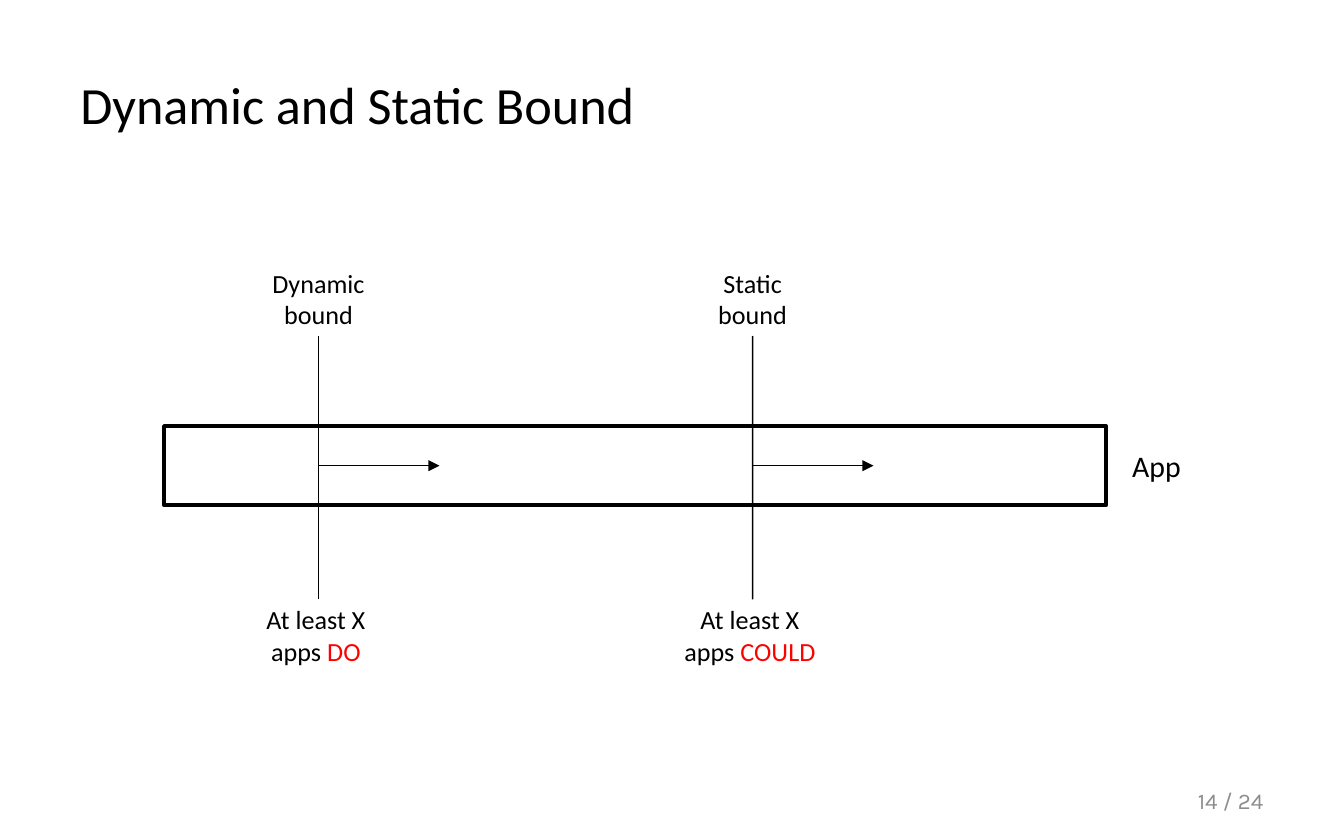
import pptx
import pptx.util
import pptx.dml.color
import pptx.enum.shapes
import pptx.enum.text
import pptx.oxml.ns
from lxml import etree

Inches, Pt = pptx.util.Inches, pptx.util.Pt
ALIGN = pptx.enum.text.PP_ALIGN

COLORS = {"ink": "000000", "paper": "FFFFFF", "accent": "FF0000", "muted": "8C8C8C"}

# Content: each bound has a place, a label above the bar and a claim below it
TITLE = "Dynamic and Static Bound"
BAR_LABEL = "App"
PAGE = "14 / 24"
BOUNDS = [
    {"x": 2.37, "label": ["Dynamic bound"], "claim": "At least X apps ", "verb": "DO", "claim_width": 1.15},
    {"x": 5.6, "label": ["Static", "bound"], "claim": "At least X apps ", "verb": "COULD", "claim_width": 1.26},
]

# Layout in inches
BAR = (1.22, 3.17, 7.01, 0.59)
LABEL_WIDTH, LABEL_HEIGHT = 1.15, 0.56
MARK_TOP, MARK_BOTTOM = 2.5, 4.46
CLAIM_TOP, CLAIM_HEIGHT, CLAIM_SHIFT = 4.44, 0.57, -0.02
ARROW_LENGTH = 0.9

presentation = pptx.Presentation()
presentation.slide_width, presentation.slide_height = Inches(10), Inches(6.25)
slide = presentation.slides.add_slide(presentation.slide_layouts[6])


def rgb(name):
    return pptx.dml.color.RGBColor.from_string(COLORS[name])


def add_text(paragraphs, box, size=14, font="Calibri", color="ink", align=ALIGN.CENTER):
    """Each paragraph is a string or a list of (text, colour) runs."""
    holder = slide.shapes.add_textbox(*map(Inches, box))
    frame = holder.text_frame
    frame.word_wrap = True
    frame.vertical_anchor = pptx.enum.text.MSO_ANCHOR.MIDDLE
    for i, content in enumerate(paragraphs):
        paragraph = frame.paragraphs[0] if i == 0 else frame.add_paragraph()
        paragraph.alignment = align
        for text, run_color in [(content, color)] if isinstance(content, str) else content:
            run = paragraph.add_run()
            run.text = text
            run.font.size, run.font.name = Pt(size), font
            run.font.color.rgb = rgb(run_color)
    return holder


def add_line(x1, y1, x2, y2, arrow=False):
    line = slide.shapes.add_connector(
        pptx.enum.shapes.MSO_CONNECTOR.STRAIGHT, *map(Inches, (x1, y1, x2, y2)))
    line.line.color.rgb = rgb("ink")
    line.line.width = Pt(0.75)
    if arrow:
        etree.SubElement(line.line._get_or_add_ln(), pptx.oxml.ns.qn("a:tailEnd"), type="triangle")
    etree.SubElement(line._element.spPr, pptx.oxml.ns.qn("a:effectLst"))
    return line


# Title
add_text([TITLE], (0.5, 0.25, 9, 1.04), size=28, align=ALIGN.LEFT)

# Bar of apps
bar = slide.shapes.add_shape(pptx.enum.shapes.MSO_SHAPE.RECTANGLE, *map(Inches, BAR))
bar.shadow.inherit = False
bar.fill.solid()
bar.fill.fore_color.rgb = rgb("paper")
bar.line.color.rgb = rgb("ink")
bar.line.width = Pt(2)
add_text([BAR_LABEL], (8.25, 3.28, 0.71, 0.37), size=16)

# Bounds: label, mark across the bar, arrow and claim
bar_middle = BAR[1] + BAR[3] / 2
for bound in BOUNDS:
    x, claim_width = bound["x"], bound["claim_width"]
    label = add_text(bound["label"],
                     (x - LABEL_WIDTH / 2, MARK_TOP - LABEL_HEIGHT, LABEL_WIDTH, LABEL_HEIGHT))
    mark = add_line(x, MARK_TOP, x, MARK_BOTTOM)
    mark.begin_connect(label, 2)
    add_line(x, bar_middle, x + ARROW_LENGTH, bar_middle, arrow=True)
    add_text([[(bound["claim"], "ink"), (bound["verb"], "accent")]],
             (x + CLAIM_SHIFT - claim_width / 2, CLAIM_TOP, claim_width, CLAIM_HEIGHT))

# Page number
add_text([PAGE], (7.17, 5.79, 2.33, 0.33), size=12, font="Karla", color="muted", align=ALIGN.RIGHT)

presentation.save("out.pptx")
